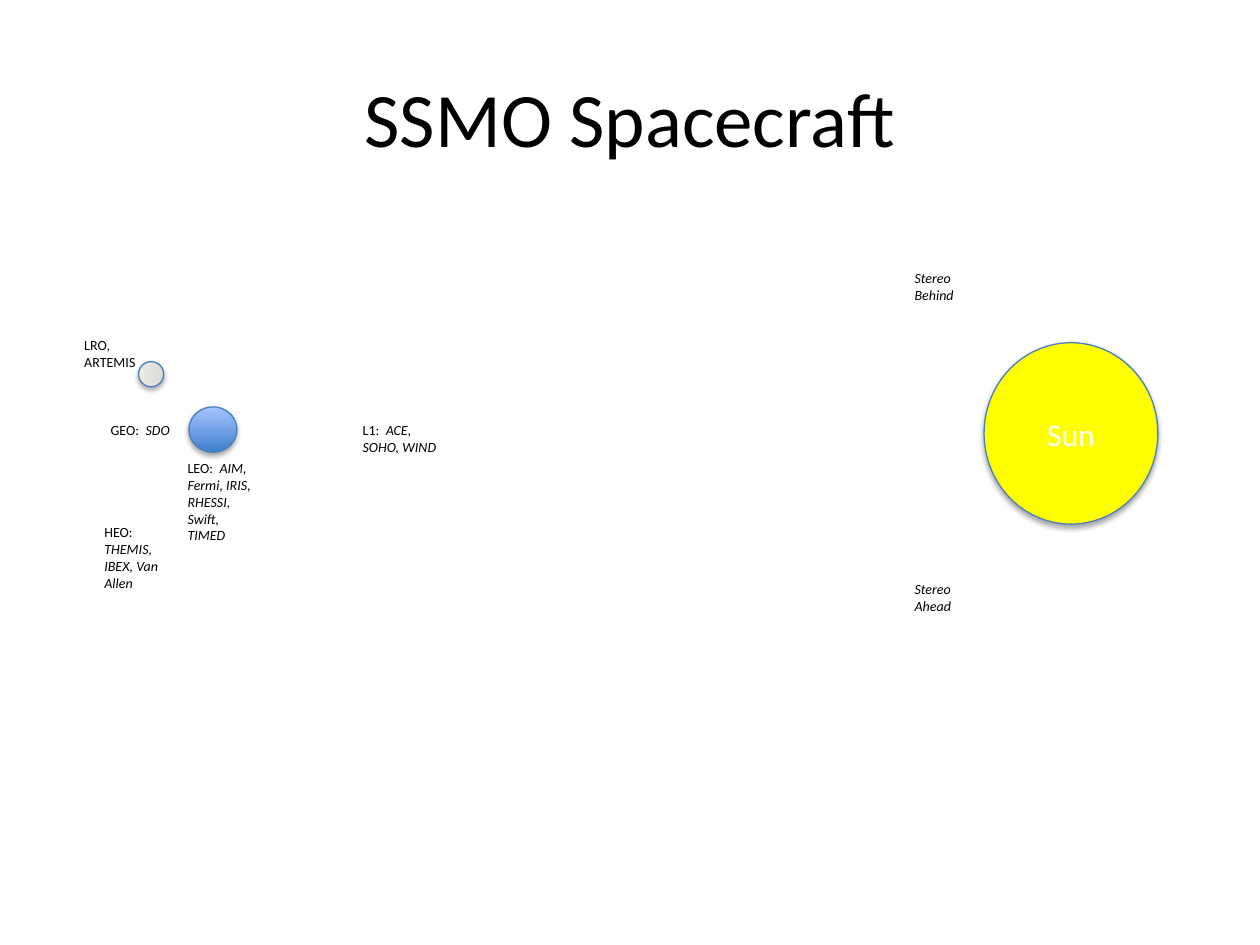
from lxml.etree import SubElement
from pptx import Presentation
from pptx.dml.color import RGBColor
from pptx.enum.shapes import MSO_SHAPE as Preset
from pptx.enum.text import MSO_ANCHOR as Anchor, MSO_AUTO_SIZE as AutoSize, PP_ALIGN as Align
from pptx.oxml.ns import qn
from pptx.util import Inches, Pt

COLUMNS, ROWS, CELL = 100, 75, 0.1
FONT = "Calibri"
COLORS = {
    "text": "000000", "sun_text": "FFFFFF", "outline": "4B7EBC", "shadow": "000000",
    "earth_low": "3F80CE", "earth_high": "A4C4FF", "moon_left": "EEECE1",
    "moon_right": "D9D9D9", "sun": "FFFF00",
}
BODIES = [
    ((15, 32.3, 3.8, 3.6), ("earth_low", "earth_high"), 0, 90, ""),
    ((11, 28.7, 2, 2), ("moon_left", "moon_right"), 0, 0, ""),
    ((78.1, 27.2, 13.8, 14.4), ("sun", "earth_high"), 0.99, 0, "Sun"),
]
ORBIT_LABELS = [
    ((5.7, 26.2, 7.3, 3.7), "LRO, ARTEMIS", ""),
    ((7.8, 33, 7.3, 2.4), "GEO:  ", "SDO"),
    ((13.9, 36, 7.3, 7.7), "LEO:  ", "AIM, Fermi, IRIS, RHESSI, Swift, TIMED"),
    ((27.8, 33, 8.7, 3.7), "L1:  ", "ACE, SOHO, WIND"),
    ((7.3, 41.1, 7.3, 6.4), "HEO:  ", "THEMIS, IBEX, Van Allen"),
    ((71.6, 20.9, 6.5, 3.7), "", "Stereo Behind"),
    ((71.6, 45.6, 6.5, 3.7), "", "Stereo Ahead"),
]


def color(name):
    """Return the named colour."""
    return RGBColor.from_string(COLORS[name])


def place(box):
    """Turn grid columns and rows into slide lengths."""
    return [Inches(cells * CELL) for cells in box]


def style(paragraph, size, color_name):
    """Set the font of a paragraph."""
    paragraph.font.name = FONT
    paragraph.font.size = Pt(size)
    paragraph.font.color.rgb = color(color_name)


def center(shape, text, size, color_name):
    """Write one line in the middle of a shape."""
    frame = shape.text_frame
    frame.word_wrap = True
    frame.vertical_anchor = Anchor.MIDDLE
    paragraph = frame.paragraphs[0]
    paragraph.text = text
    paragraph.alignment = Align.CENTER
    style(paragraph, size, color_name)


def add_shadow(shape):
    """Give a shape a soft shadow below it."""
    shape.shadow.inherit = False
    effects = shape._element.spPr.find(qn("a:effectLst"))
    shadow = SubElement(effects, qn("a:outerShdw"), blurRad=str(Pt(3.1)),
                        dist=str(Pt(1.8)), dir="5400000", rotWithShape="0")
    tint = SubElement(shadow, qn("a:srgbClr"), val=COLORS["shadow"])
    SubElement(tint, qn("a:alpha"), val="35000")


def add_body(slide, box, color_names, start, angle, name):
    """Draw a sun, planet or moon with a gradient."""
    shape = slide.shapes.add_shape(Preset.OVAL, *place(box))
    shape.fill.gradient()
    shape.fill.gradient_angle = angle
    for stop, color_name, position in zip(shape.fill.gradient_stops, color_names, (start, 1)):
        stop.color.rgb = color(color_name)
        stop.position = position
    shape.line.color.rgb = color("outline")
    shape.line.width = Pt(0.75)
    add_shadow(shape)
    if name:
        center(shape, name, 18, "sun_text")


def add_orbit_label(slide, box, orbit, spacecraft):
    """Write an orbit followed by its spacecraft in italics."""
    frame = slide.shapes.add_textbox(*place(box)).text_frame
    frame.word_wrap = True
    frame.auto_size = AutoSize.SHAPE_TO_FIT_TEXT
    paragraph = frame.paragraphs[0]
    style(paragraph, 8, "text")
    if orbit:
        paragraph.add_run().text = orbit
    if spacecraft:
        run = paragraph.add_run()
        run.text = spacecraft
        run.font.italic = True


def main():
    """Build the slide and save it."""
    presentation = Presentation()
    presentation.slide_width = Inches(COLUMNS * CELL)
    presentation.slide_height = Inches(ROWS * CELL)
    slide = presentation.slides.add_slide(presentation.slide_layouts[6])
    title = slide.shapes.add_textbox(*place((5, 3, 90, 12.5)))
    center(title, "SSMO Spacecraft", 44, "text")
    for body in BODIES:
        add_body(slide, *body)
    for label in ORBIT_LABELS:
        add_orbit_label(slide, *label)
    presentation.save("out.pptx")


if __name__ == "__main__":
    main()
